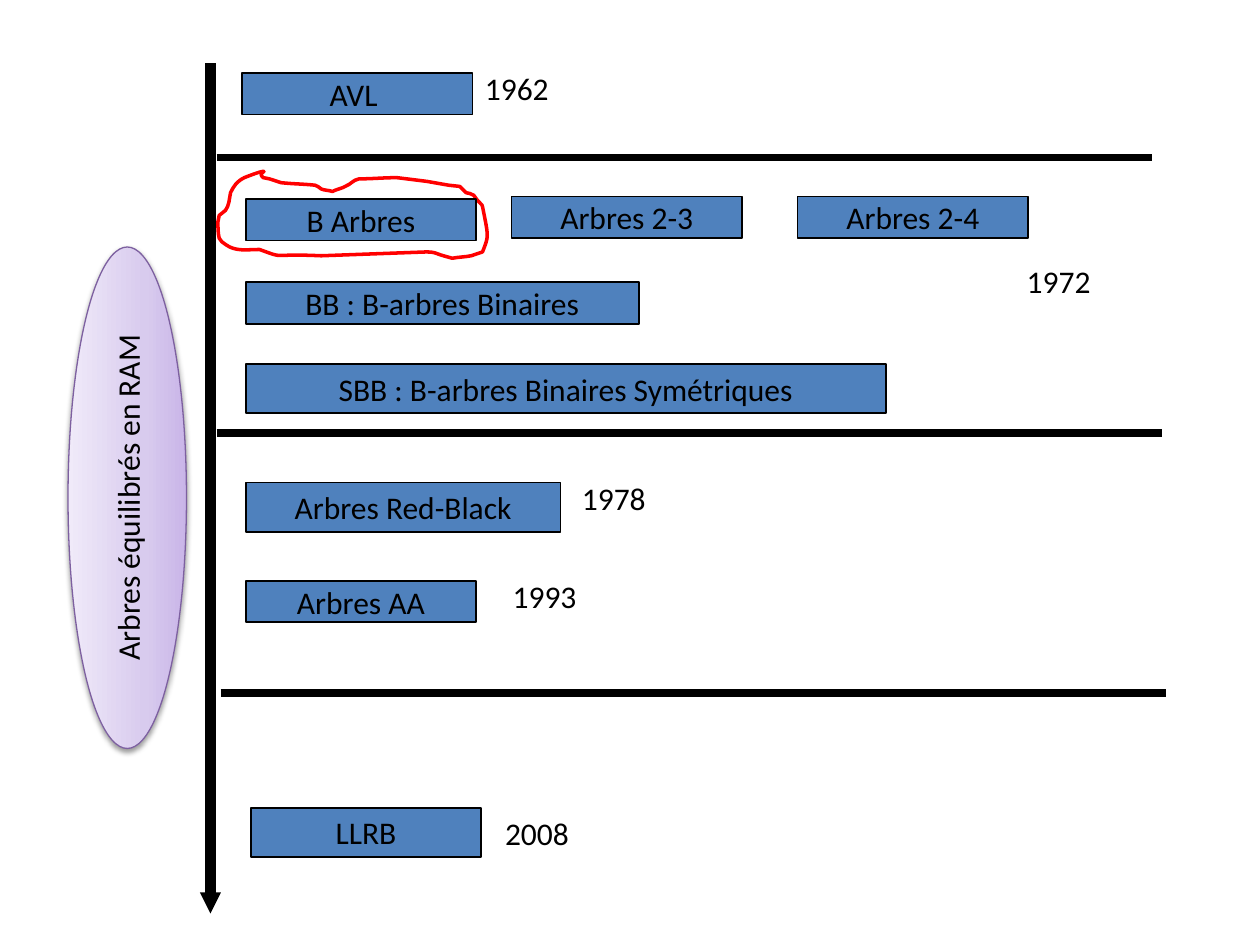
from dataclasses import dataclass

from lxml import etree
from pptx import Presentation
from pptx.dml.color import RGBColor
from pptx.enum.shapes import MSO_CONNECTOR, MSO_SHAPE
from pptx.enum.text import MSO_ANCHOR, MSO_AUTO_SIZE, PP_ALIGN
from pptx.oxml.ns import qn
from pptx.util import Pt

PX = 9144  # EMU per px, 100 px to the inch


@dataclass(frozen=True)
class Theme:
    font: str = "Calibri"
    text_size: int = 18
    ink: str = "000000"
    paper: str = "FFFFFF"
    box_fill: str = "4F81BD"
    box_line: float = 1
    axis_line: float = 6
    divider_line: float = 4.5
    mark: str = "FF0000"
    mark_line: float = 2
    oval_edge: str = "7D60A0"
    oval_line: float = 0.75
    oval_stops: tuple = ((0, "C9B5E8"), (35, "D8CBEE"), (100, "F0EAF9"))


@dataclass(frozen=True)
class Tree:
    name: str
    left: int
    top: int
    width: int = 183
    height: int = 33


@dataclass(frozen=True)
class Year:
    label: str
    left: int
    top: int


@dataclass(frozen=True)
class Rule:
    start: tuple
    end: tuple
    weight: float = Theme.divider_line
    arrow: bool = False


THEME = Theme()

TREES = [
    Tree("AVL ", 192, 58),
    Tree("B Arbres", 195, 158),
    Tree("Arbres 2-3", 406, 156),
    Tree("Arbres 2-4", 633, 156),
    Tree("BB : B-arbres Binaires", 195, 224, width=312),
    Tree("SBB : B-arbres Binaires Symétriques", 195, 289, width=508, height=39),
    Tree("Arbres Red-Black", 195, 383, width=250, height=39),
    Tree("Arbres AA", 195, 461),
    Tree("LLRB", 199, 641, height=39),
]
YEARS = [
    Year("1962", 375, 50),
    Year("1972", 805, 203),
    Year("1978", 452, 375),
    Year("1993", 397, 453),
    Year("2008", 391, 641),
]
RULES = [
    Rule((167, 50), (167, 725), weight=THEME.axis_line, arrow=True),
    Rule((172, 125), (914, 125)),
    Rule((172, 344), (922, 344)),
    Rule((175, 550), (925, 550)),
]

# Hand-drawn loop: each segment is an end point, or two control points and an end point
LOOP_START = (209, 136)
LOOP = [
    [(207, 136), (199, 139), (194, 141)], [(188, 144), (186, 147), (183, 153)],
    [(182, 158), (182, 163), (179, 167)], [(174, 171)],
    [(174, 173), (173, 174), (173, 176)], [(173, 180), (173, 185), (174, 189)],
    [(175, 191), (177, 193), (179, 194)], [(187, 200), (196, 198), (206, 198)],
    [(228, 206), (212, 201), (255, 203)], [(338, 200)],
    [(346, 200), (345, 201), (352, 203)], [(354, 204), (357, 204), (359, 205)],
    [(364, 204), (369, 204), (374, 203)], [(377, 202), (383, 200), (383, 200)],
    [(388, 187), (388, 189), (383, 164)], [(383, 162), (380, 161), (379, 159)],
    [(378, 158), (377, 156), (376, 155)], [(374, 153), (372, 154), (370, 153)],
    [(368, 152), (367, 149), (365, 148)], [(362, 147), (359, 148), (356, 147)],
    [(348, 145), (348, 145), (339, 144)], [(331, 143), (315, 141), (315, 141)],
    [(305, 141), (295, 142), (285, 142)], [(280, 143), (279, 146), (274, 148)],
    [(273, 149), (265, 151), (264, 152)], [(261, 151), (257, 151), (255, 150)],
    [(253, 149), (252, 147), (250, 147)], [(241, 146), (232, 146), (223, 145)],
    [(214, 142)], [(209, 141)], [(204, 137), (212, 136), (209, 136)],
]


def emu(*lengths: int) -> list:
    return [length * PX for length in lengths]


def add_child(parent, tag: str, **attributes):
    return etree.SubElement(parent, qn(tag), attributes)


def set_line(shape, color: str, weight: float) -> None:
    shape.line.color.rgb = RGBColor.from_string(color)
    shape.line.width = Pt(weight)


def set_fill(shape, color: str) -> None:
    shape.fill.solid()
    shape.fill.fore_color.rgb = RGBColor.from_string(color)


def write(shape, text: str, *, align=PP_ALIGN.LEFT, anchor=MSO_ANCHOR.TOP,
          fit=MSO_AUTO_SIZE.NONE, color: str = THEME.ink, size: int = THEME.text_size) -> None:
    frame = shape.text_frame
    frame.word_wrap = False
    frame.auto_size = fit
    frame.vertical_anchor = anchor
    para = frame.paragraphs[0]
    para.alignment = align
    span = para.add_run()
    span.text = text
    span.font.name = THEME.font
    span.font.size = Pt(size)
    span.font.color.rgb = RGBColor.from_string(color)


def draw_tree(page, tree: Tree) -> None:
    box = page.shapes.add_shape(
        MSO_SHAPE.RECTANGLE, *emu(tree.left, tree.top, tree.width, tree.height))
    box.shadow.inherit = False
    set_fill(box, THEME.box_fill)
    set_line(box, THEME.ink, THEME.box_line)
    write(box, tree.name, align=PP_ALIGN.CENTER, anchor=MSO_ANCHOR.MIDDLE)


def draw_year(page, year: Year) -> None:
    box = page.shapes.add_textbox(*emu(year.left, year.top, 88, 51))
    write(box, year.label, fit=MSO_AUTO_SIZE.SHAPE_TO_FIT_TEXT)


def draw_rule(page, rule: Rule) -> None:
    line = page.shapes.add_connector(MSO_CONNECTOR.STRAIGHT, *emu(*rule.start, *rule.end))
    set_line(line, THEME.ink, rule.weight)
    if rule.arrow:
        add_child(line.line._get_or_add_ln(), "a:tailEnd", type="triangle", w="sm", len="sm")
    add_child(line.element.spPr, "a:effectLst")


def draw_loop(page) -> None:
    builder = page.shapes.build_freeform(*LOOP_START, scale=PX)
    builder.add_line_segments([segment[-1] for segment in LOOP], close=True)
    loop = builder.convert_to_shape()
    loop.shadow.inherit = False
    set_fill(loop, THEME.paper)
    set_line(loop, THEME.mark, THEME.mark_line)
    # Turn the straight segments with control points into curves
    left, top = round(loop.left / PX), round(loop.top / PX)
    straight = list(loop.element.iter(qn("a:lnTo")))
    for node, segment in zip(straight, LOOP):
        if len(segment) == 3:
            curve = etree.Element(qn("a:cubicBezTo"))
            for x, y in segment:
                add_child(curve, "a:pt", x=str(x - left), y=str(y - top))
            node.getparent().replace(node, curve)


def draw_oval(page, text: str) -> None:
    oval = page.shapes.add_shape(MSO_SHAPE.OVAL, *emu(-98, 348, 398, 94))
    oval.rotation = 270
    set_line(oval, THEME.oval_edge, THEME.oval_line)
    # Three-stop gradient
    oval.fill.gradient()
    oval.fill.gradient_angle = 90
    stops = next(oval.element.iter(qn("a:gsLst")))
    for stop in list(stops):
        stops.remove(stop)
    for position, color in THEME.oval_stops:
        stop = add_child(stops, "a:gs", pos=str(position * 1000))
        add_child(stop, "a:srgbClr", val=color)
    # Soft shadow below
    oval.shadow.inherit = False
    effects = oval.element.spPr.find(qn("a:effectLst"))
    shadow = add_child(effects, "a:outerShdw", blurRad=str(Pt(3.1)), dist=str(Pt(1.6)),
                       dir="5400000", rotWithShape="0")
    shade = add_child(shadow, "a:srgbClr", val=THEME.ink)
    add_child(shade, "a:alpha", val="38000")
    write(oval, text, align=PP_ALIGN.CENTER, anchor=MSO_ANCHOR.MIDDLE)


def main() -> None:
    deck = Presentation()
    deck.slide_width, deck.slide_height = emu(1000, 750)
    page = deck.slides.add_slide(deck.slide_layouts[6])
    draw_loop(page)
    # Time axis and period dividers
    for rule in RULES:
        draw_rule(page, rule)
    draw_oval(page, "Arbres équilibrés en RAM")
    for tree in TREES:
        draw_tree(page, tree)
    for year in YEARS:
        draw_year(page, year)
    deck.save("out.pptx")


if __name__ == "__main__":
    main()
